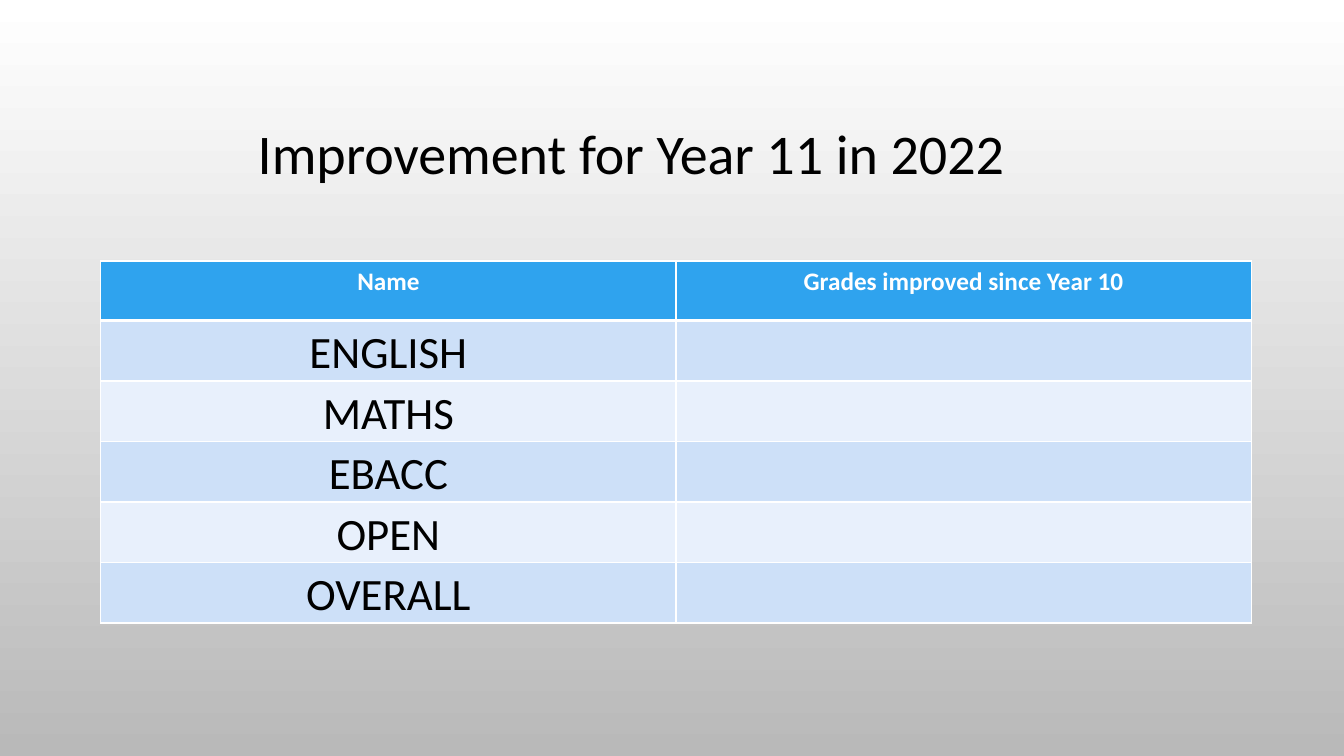
from typing import NamedTuple

from lxml import etree
from pptx import Presentation
from pptx.dml.color import RGBColor
from pptx.enum.text import MSO_ANCHOR, MSO_AUTO_SIZE, PP_ALIGN
from pptx.oxml.ns import qn
from pptx.util import Inches, Pt

CENTER = PP_ALIGN.CENTER
TOP, BOTTOM = MSO_ANCHOR.TOP, MSO_ANCHOR.BOTTOM
GROW = MSO_AUTO_SIZE.SHAPE_TO_FIT_TEXT
FONT = "Calibri"
TITLE_ONLY = 5
COLORS = {
    "black": "000000",
    "white": "FFFFFF",
    "gray": "B9B9B9",
    "header": "2FA3EE",
    "odd": "CDE0F8",
    "even": "E8F0FC",
}


class RowStyle(NamedTuple):
    fill: str
    color: str
    size: int
    bold: bool
    bottom_border: int


HEADER = RowStyle("header", "white", 18, True, 3)
ODD = RowStyle("odd", "black", 32, False, 1)
EVEN = RowStyle("even", "black", 32, False, 1)

HEADINGS = ["Name", "Grades improved since Year 10"]
SUBJECTS = ["ENGLISH", "MATHS", "EBACC", "OPEN", "OVERALL"]


def rgb(name: str) -> RGBColor:
    return RGBColor.from_string(COLORS[name])


def format_text(tf, size: int, color: str, bold: bool) -> None:
    p = tf.paragraphs[0]
    p.alignment = CENTER
    for r in p.runs:
        r.font.name = FONT
        r.font.size = Pt(size)
        r.font.bold = bold
        r.font.color.rgb = rgb(color)


def add_borders(cell, top: int, bottom: int) -> None:
    tc_pr = cell._tc.get_or_add_tcPr()
    for tag, width in (("lnL", 1), ("lnR", 1), ("lnT", top), ("lnB", bottom)):
        ln = etree.SubElement(tc_pr, qn(f"a:{tag}"), w=str(Pt(width)))
        fill = etree.SubElement(ln, qn("a:solidFill"))
        etree.SubElement(fill, qn("a:srgbClr"), val=COLORS["white"])


def fill_cell(cell, text: str, style: RowStyle, top_border: int) -> None:
    add_borders(cell, top_border, style.bottom_border)
    cell.fill.solid()
    cell.fill.fore_color.rgb = rgb(style.fill)
    if text:
        cell.text_frame.text = text
        format_text(cell.text_frame, style.size, style.color, style.bold)
        if style is not HEADER:
            cell.vertical_anchor = BOTTOM
            cell.margin_left = cell.margin_right = cell.margin_top = Inches(0.01)
            cell.margin_bottom = 0


def add_background(s) -> None:
    fill = s.background.fill
    fill.gradient()
    fill.gradient_angle = 270
    for stop, position, color in zip(fill.gradient_stops, (0, 1), ("white", "gray")):
        stop.position = position
        stop.color.rgb = rgb(color)


def add_title(s, text: str) -> None:
    sp = s.shapes.title
    sp.left, sp.top = Inches(1.93), Inches(1.13)
    sp.width, sp.height = Inches(8.66), Inches(0.77)
    tf = sp.text_frame
    tf.text = text
    tf.word_wrap = True
    tf.auto_size = GROW
    tf.vertical_anchor = TOP
    format_text(tf, 40, "black", False)


def add_grades_table(s) -> None:
    rows = [HEADINGS] + [[subject, ""] for subject in SUBJECTS]
    table = s.shapes.add_table(len(rows), len(HEADINGS), Inches(1), Inches(2.59),
                               Inches(11.41), Inches(3.59)).table
    top_border = 1
    for i, texts in enumerate(rows):
        style = HEADER if i == 0 else ODD if i % 2 else EVEN
        table.rows[i].height = Inches(0.6 if i else 0.59)
        for j, text in enumerate(texts):
            fill_cell(table.cell(i, j), text, style, top_border)
        top_border = style.bottom_border


def main() -> None:
    prs = Presentation()
    prs.slide_width, prs.slide_height = Inches(13.33), Inches(7.5)
    s = prs.slides.add_slide(prs.slide_layouts[TITLE_ONLY])

    # Background, title and table
    add_background(s)
    add_title(s, "Improvement for Year 11 in 2022")
    add_grades_table(s)

    prs.save("out.pptx")


if __name__ == "__main__":
    main()
